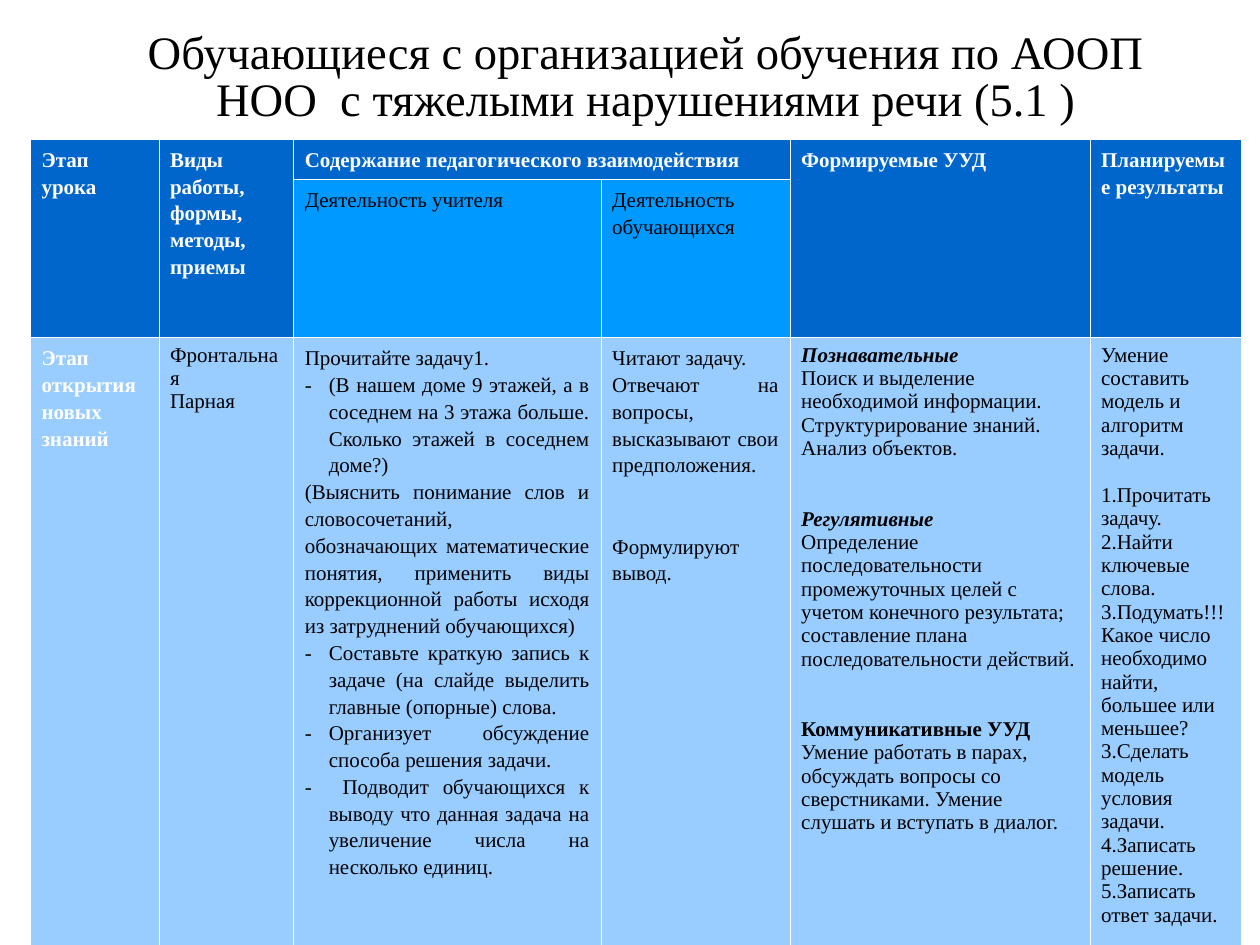
from pptx import Presentation
from pptx.util import Inches, Pt
from pptx.dml.color import RGBColor
from pptx.enum.text import PP_ALIGN, MSO_ANCHOR
from pptx.oxml.ns import qn
from lxml import etree

LEFT, MID, JUST = PP_ALIGN.LEFT, PP_ALIGN.CENTER, PP_ALIGN.JUSTIFY
CENTER = MSO_ANCHOR.MIDDLE
FONT = "Times New Roman"
COLORS = {"head": "0066CC", "sub": "0099FF", "body": "99CCFF",
          "dark": "000000", "light": "FFFFFF"}


def rgb(name):
    return RGBColor.from_string(COLORS[name])


def write(par, text, size=12, color="dark", bold=False, italic=False,
          align=JUST, line=1.15, gap=0, dash=False):
    par.alignment, par.line_spacing = align, line
    par.space_before, par.space_after = Pt(gap), Pt(0)
    run = par.add_run()
    run.text = text
    font = run.font
    font.name, font.size, font.bold, font.italic = FONT, Pt(size), bold, italic
    font.color.rgb = rgb(color)
    if dash:
        props = par._p.get_or_add_pPr()
        props.set("marL", str(Inches(0.19)))
        props.set("indent", str(-Inches(0.19)))
        etree.SubElement(props, qn("a:buFont"), typeface=FONT)
        etree.SubElement(props, qn("a:buChar"), char="-")


class Deck:
    def __init__(self, wide=10, high=7.5):
        self.prs = Presentation()
        self.wide = self.prs.slide_width = Inches(wide)
        self.high = self.prs.slide_height = Inches(high)
        self.slide = self.prs.slides.add_slide(self.prs.slide_layouts[5])

    def across(self, share):
        return round(self.wide * share / 100)

    def down(self, share):
        return round(self.high * share / 100)

    def title(self, text, x, y, w, h):
        box = self.slide.shapes.title
        box.left, box.top = self.across(x), self.down(y)
        box.width, box.height = self.across(w), self.down(h)
        frame = box.text_frame
        frame.word_wrap, frame.vertical_anchor = True, CENTER
        write(frame.paragraphs[0], text, size=26.6, align=MID, line=0.84)

    def table(self, x, y, cols, rows):
        frame = self.slide.shapes.add_table(
            len(rows), len(cols), self.across(x), self.down(y),
            self.across(sum(cols)), self.down(sum(rows)))
        grid = frame.table
        for col, share in zip(grid.columns, cols):
            col.width = self.across(share)
        for row, share in zip(grid.rows, rows):
            row.height = self.down(share)
        return grid

    def cell(self, cell, pars, fill, **style):
        cell.margin_left = cell.margin_right = Inches(0.09)
        cell.margin_top = cell.margin_bottom = Inches(0.05)
        frame = cell.text_frame
        for i, item in enumerate(pars):
            text, extra = item if isinstance(item, tuple) else (item, {})
            par = frame.add_paragraph() if i else frame.paragraphs[0]
            write(par, text, **{**style, **extra})
        self.edge(cell)
        cell.fill.solid()
        cell.fill.fore_color.rgb = rgb(fill)

    def edge(self, cell):
        props = cell._tc.get_or_add_tcPr()
        for side in ("lnL", "lnR", "lnT", "lnB"):
            line = etree.SubElement(props, qn("a:" + side), w=str(Pt(0.06)))
            fill = etree.SubElement(line, qn("a:solidFill"))
            etree.SubElement(fill, qn("a:srgbClr"), val=COLORS["light"])


# Text formats
HEAD = dict(color="light", bold=True)
PLAIN = dict(align=LEFT, line=1)
DASH = dict(dash=True)

# Table text
HEADS = {0: "Этап урока", 1: "Виды работы, формы, методы, приемы",
         2: "Содержание педагогического взаимодействия",
         4: "Формируемые УУД", 5: "Планируемые результаты"}
SUBS = {2: "Деятельность учителя", 3: "Деятельность обучающихся"}
BODY = [
    (["Этап открытия новых знаний"], HEAD),
    (["Фронтальная", "Парная"], PLAIN),
    (["Прочитайте задачу1.",
      ("(В нашем доме 9 этажей, а в соседнем на 3 этажа больше. "
       "Сколько этажей в соседнем доме?)", DASH),
      "(Выяснить понимание слов и словосочетаний, обозначающих "
      "математические понятия, применить виды коррекционной работы "
      "исходя из затруднений обучающихся)",
      ("Составьте краткую запись к задаче (на слайде выделить "
       "главные (опорные) слова.", DASH),
      ("Организует обсуждение способа решения задачи.", DASH),
      (" Подводит обучающихся к выводу что данная задача на "
       "увеличение числа на несколько единиц.", DASH)], {}),
    (["Читают задачу.",
      "Отвечают на вопросы, высказывают свои предположения.",
      ("Формулируют вывод.", dict(gap=31))], {}),
    ([("Познавательные", dict(bold=True, italic=True)),
      "Поиск и выделение необходимой информации. "
      "Структурирование знаний.",
      "Анализ объектов.",
      ("Регулятивные", dict(bold=True, italic=True, gap=27)),
      "Определение последовательности промежуточных целей с учетом "
      "конечного результата; составление плана последовательности "
      "действий.",
      ("Коммуникативные УУД", dict(bold=True, gap=27)),
      "Умение работать в парах, обсуждать вопросы со сверстниками. "
      "Умение слушать и вступать в диалог."], PLAIN),
    (["Умение составить модель и алгоритм задачи.",
      ("1.Прочитать задачу.", dict(gap=13.5)),
      "2.Найти ключевые слова.",
      "3.Подумать!!! Какое число необходимо найти, большее или меньшее?",
      "3.Сделать модель условия задачи.",
      "4.Записать решение.",
      "5.Записать ответ задачи."], PLAIN),
]


def main():
    deck = Deck()
    deck.title("Обучающиеся с организацией обучения по АООП НОО  "
               "с тяжелыми нарушениями речи (5.1 )", 6.3, 2.3, 90, 12.1)

    grid = deck.table(2.4, 14.7, [10.2, 10.7, 24.4, 15, 23.8, 12],
                      [4.3, 16.7, 64.3])
    # Header rows
    for col in (0, 1, 4, 5):
        grid.cell(0, col).merge(grid.cell(1, col))
    grid.cell(0, 2).merge(grid.cell(0, 3))
    for col, text in HEADS.items():
        deck.cell(grid.cell(0, col), [text], "head", **HEAD)
    for col, text in SUBS.items():
        deck.cell(grid.cell(1, col), [text], "sub")
    # Lesson stage row
    for col, (pars, style) in enumerate(BODY):
        deck.cell(grid.cell(2, col), pars, "body", **style)

    deck.prs.save("out.pptx")


if __name__ == "__main__":
    main()
